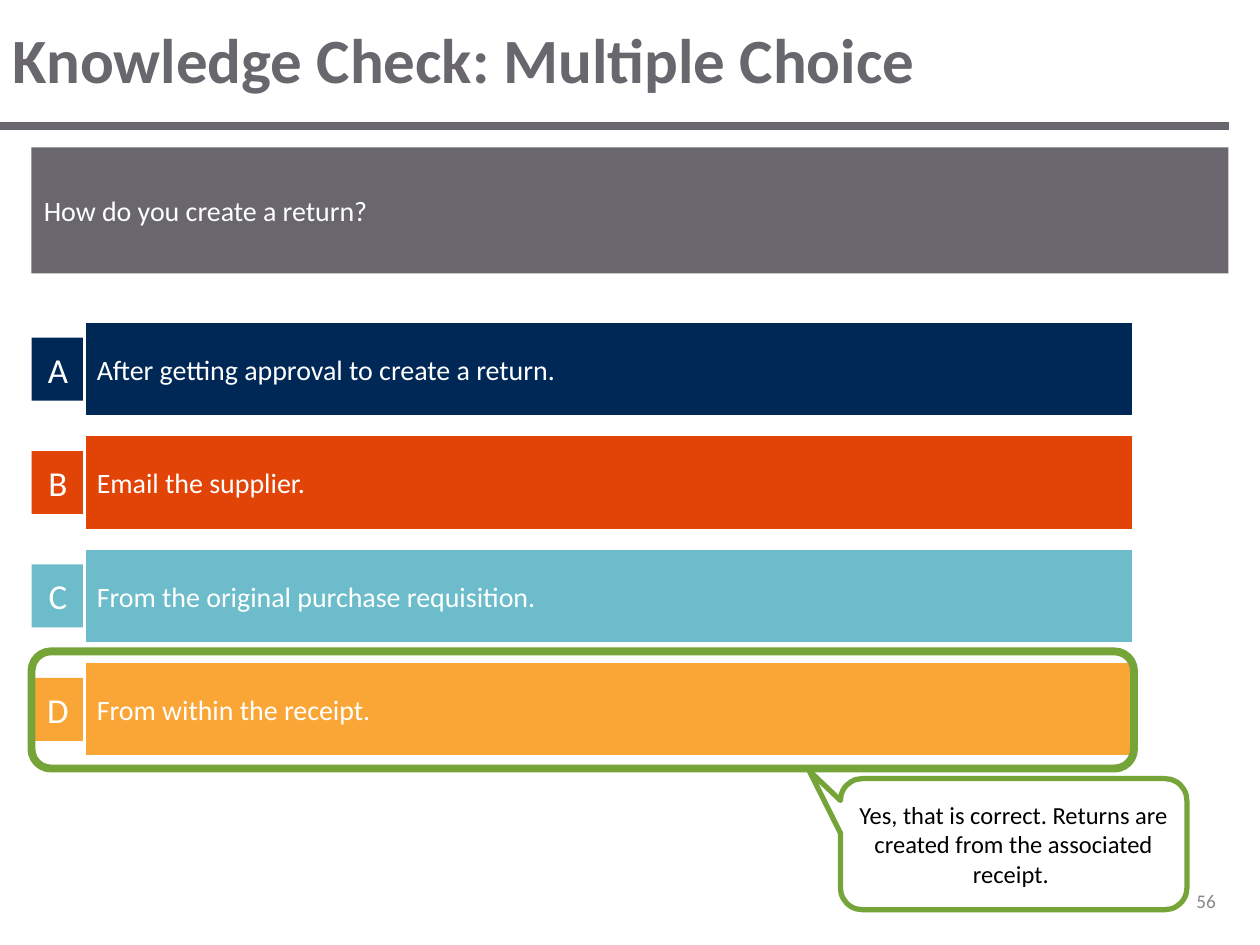
import pptx
import pptx.util
import pptx.dml.color
import pptx.enum.shapes
import pptx.enum.text
import pptx.oxml

Inches, Pt = pptx.util.Inches, pptx.util.Pt
MSO_SHAPE = pptx.enum.shapes.MSO_SHAPE
PP_ALIGN = pptx.enum.text.PP_ALIGN
GREY, WHITE, GREEN = "69676D", "FFFFFF", "75A439"


def rgb(color):
    return pptx.dml.color.RGBColor.from_string(color)


def add_box(kind, left, top, width, height, fill=None, line=None, weight=0,
            text="", size=16, color=WHITE, align=PP_ALIGN.LEFT):
    sp = s.shapes.add_shape(kind, Inches(left), Inches(top), Inches(width), Inches(height))
    sp.shadow.inherit = False
    if fill:
        sp.fill.solid()
        sp.fill.fore_color.rgb = rgb(fill)
    else:
        sp.fill.background()
    if line:
        sp.line.color.rgb = rgb(line)
        sp.line.width = Pt(weight)
    else:
        sp.line.fill.background()
    tf = sp.text_frame
    tf.word_wrap = True
    tf.vertical_anchor = pptx.enum.text.MSO_ANCHOR.MIDDLE
    p = tf.paragraphs[0]
    p.text = text
    p.alignment = align
    p.font.name = "Calibri"
    p.font.size = Pt(size)
    p.font.color.rgb = rgb(color)
    return sp


prs = pptx.Presentation()
prs.slide_width, prs.slide_height = Inches(10), Inches(7.5)
s = prs.slides.add_slide(prs.slide_layouts[5])

# Title
title = s.shapes.title
title.left, title.top, title.width, title.height = 0, 0, Inches(10), Inches(0.92)
tf = title.text_frame
tf.vertical_anchor = pptx.enum.text.MSO_ANCHOR.MIDDLE
p = tf.paragraphs[0]
p.text = "Knowledge Check: Multiple Choice"
p.alignment = PP_ALIGN.LEFT
p.font.name = "Calibri"
p.font.size = Pt(36)
p.font.bold = True
p.font.color.rgb = rgb(GREY)

# Rule under the title
rule = s.shapes.add_connector(pptx.enum.shapes.MSO_CONNECTOR.STRAIGHT,
                              0, Inches(1), Inches(9.75), Inches(1))
rule.line.color.rgb = rgb(GREY)
rule.line.width = Pt(5)
rule._element.spPr.append(pptx.oxml.parse_xml(
    '<a:effectLst xmlns:a="http://schemas.openxmlformats.org/drawingml/2006/main"/>'))

# Slide number
add_box(MSO_SHAPE.RECTANGLE, 8.08, 6.95, 1.67, 0.4, text="56", size=11,
        color="888888", align=PP_ALIGN.RIGHT)

# Question
add_box(MSO_SHAPE.RECTANGLE, 0.25, 1.17, 9.5, 1, GREY, text="How do you create a return?")

# Answers, each with its letter
answers = [
    ("A", "002857", "After getting approval to create a return."),
    ("B", "E24307", "Email the supplier."),
    ("C", "6CBCCB", "From the original purchase requisition."),
    ("D", "FAA636", "From within the receipt."),
]
for i, (letter, color, answer) in enumerate(answers):
    top = 2.55 + 0.9 * i
    add_box(MSO_SHAPE.RECTANGLE, 0.25, top + 0.13, 0.42, 0.5, color,
            text=letter, size=20, align=PP_ALIGN.CENTER)
    add_box(MSO_SHAPE.RECTANGLE, 0.67, top, 8.33, 0.76, color, WHITE, 2, answer)

# Frame around the correct answer
add_box(MSO_SHAPE.ROUNDED_RECTANGLE, 0.25, 5.17, 8.75, 0.93, line=GREEN, weight=4.5)

# Feedback callout
callout = add_box(MSO_SHAPE.ROUNDED_RECTANGULAR_CALLOUT, 6.67, 6.18, 2.75, 1.04,
                  WHITE, GREEN, 3,
                  "Yes, that is correct. Returns are created from the associated receipt. ",
                  14, "000000", PP_ALIGN.CENTER)
callout.adjustments[0] = -0.59
callout.adjustments[1] = -0.56

prs.save("out.pptx")
